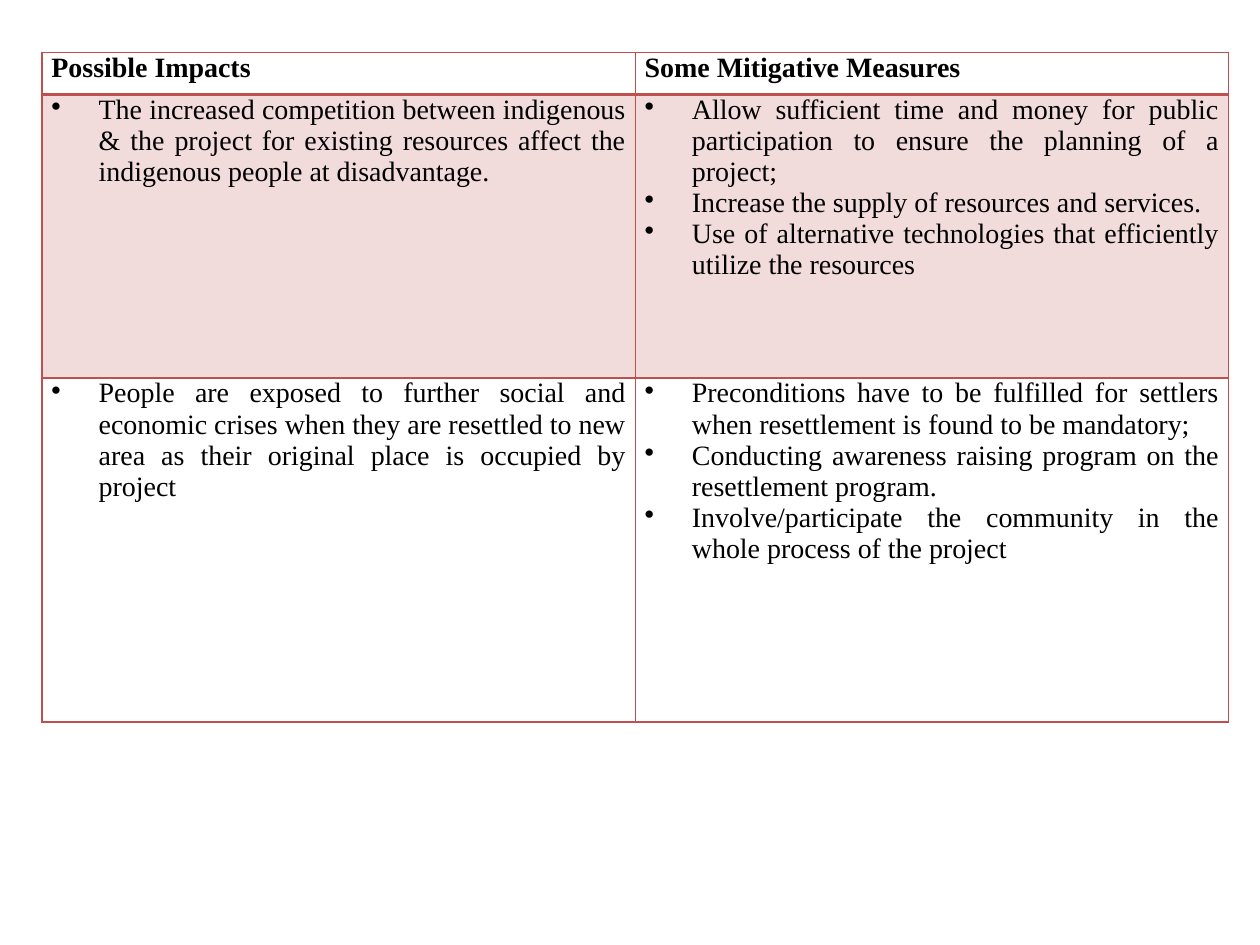
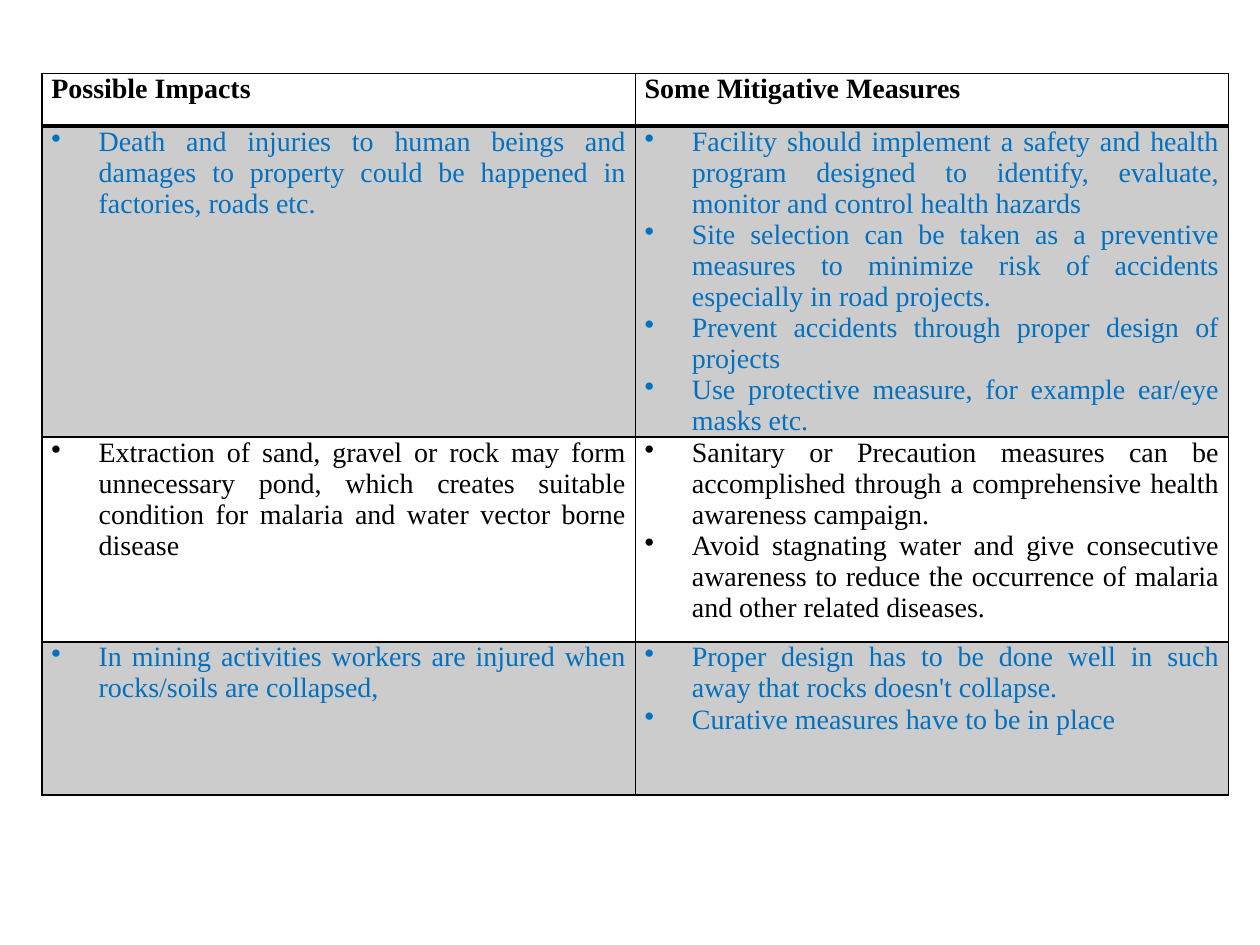
"""Two slides of tables pairing possible impacts with mitigative measures."""
from dataclasses import dataclass

from lxml import etree
from pptx import Presentation
from pptx.dml.color import RGBColor
from pptx.enum import text
from pptx.oxml import ns
from pptx.util import Pt

BLACK = RGBColor(0x00, 0x00, 0x00)
RED = RGBColor(0xC0, 0x50, 0x4D)
BLUE = RGBColor(0x00, 0x70, 0xC0)

FONT = "Times New Roman"
TEXT_SIZE = Pt(16)
LEFT = Pt(24)
COLUMN_WIDTH = Pt(339)
SIDE_MARGIN = Pt(5.4)
BULLET_INDENT = Pt(27)
BAND_OPACITY = 20
HEADINGS = ("Possible Impacts", "Some Mitigative Measures")


@dataclass(frozen=True)
class Concern:
    impact: str
    measures: tuple[str, ...]
    height: float


@dataclass(frozen=True)
class ImpactTable:
    top: float
    header_height: float
    accent: RGBColor
    band_text: RGBColor
    concerns: tuple[Concern, ...]


IMPACT_TABLES = (
    ImpactTable(30, 24, RED, BLACK, (
        Concern(
            "The increased competition between indigenous & the project for "
            "existing resources affect the indigenous people at disadvantage.",
            (
                "Allow sufficient time and money for public participation to "
                "ensure the planning of a project;",
                "Increase the supply of resources and services.",
                "Use of alternative technologies that efficiently utilize the resources",
            ),
            162),
        Concern(
            "People are exposed to further social and economic crises when they are "
            "resettled to new area as their original place is occupied by project",
            (
                "Preconditions have to be fulfilled for settlers when resettlement "
                "is found to be mandatory;",
                "Conducting awareness raising program on the resettlement program.",
                "Involve/participate the community in the whole process of the project",
            ),
            196.5),
    )),
    ImpactTable(42, 30, BLACK, BLUE, (
        Concern(
            "Death and injuries to human beings and damages to property could be "
            "happened in factories, roads etc.",
            (
                "Facility should implement a safety and health program designed to "
                "identify, evaluate, monitor and control health hazards",
                "Site selection can be taken as a preventive measures to minimize "
                "risk of accidents especially in road projects.",
                "Prevent accidents through proper design of projects",
                "Use protective measure, for example ear/eye masks etc.",
            ),
            175),
        Concern(
            "Extraction of sand, gravel or rock may form unnecessary pond, which "
            "creates suitable condition for malaria and water vector borne disease",
            (
                "Sanitary or Precaution measures can be accomplished through a "
                "comprehensive health awareness campaign.",
                "Avoid stagnating water and give consecutive awareness to reduce the "
                "occurrence of malaria and other related diseases.",
            ),
            117),
        Concern(
            "In mining activities workers are injured when rocks/soils are collapsed,",
            (
                "Proper design has to be done well in such away that rocks doesn't collapse.",
                "Curative measures have to be in place",
            ),
            87.5),
    )),
)


def add_child(parent, tag: str, **attributes):
    """Append a DrawingML element and return it."""
    return etree.SubElement(
        parent, ns.qn(tag), {key: str(value) for key, value in attributes.items()})


def draw_borders(cell, color: RGBColor, top: float, bottom: float) -> None:
    """Outline a cell, with its own weights above and below."""
    properties = cell._tc.get_or_add_tcPr()
    for side, weight in (("L", 1), ("R", 1), ("T", top), ("B", bottom)):
        line = add_child(properties, f"a:ln{side}", w=Pt(weight))
        add_child(add_child(line, "a:solidFill"), "a:srgbClr", val=color)


def fill_band(cell, color: RGBColor) -> None:
    """Tint a cell with a translucent colour."""
    cell.fill.solid()
    cell.fill.fore_color.rgb = color
    tint = cell._tc.tcPr.find(".//" + ns.qn("a:solidFill") + "[last()]")
    tint = cell._tc.tcPr.find(ns.qn("a:solidFill")).find(ns.qn("a:srgbClr"))
    add_child(tint, "a:alpha", val=BAND_OPACITY * 1000)


def write_cell(cell, lines: tuple[str, ...], color: RGBColor, heading: bool) -> None:
    """Write justified lines, bold in a heading and bulleted elsewhere."""
    cell.margin_left = cell.margin_right = SIDE_MARGIN
    cell.margin_top = cell.margin_bottom = Pt(0)
    cell.text_frame.text = "\n".join(lines)
    for paragraph in cell.text_frame.paragraphs:
        paragraph.alignment = text.PP_ALIGN.JUSTIFY
        if not heading:
            properties = paragraph._p.get_or_add_pPr()
            properties.set("marL", str(BULLET_INDENT))
            properties.set("indent", str(-BULLET_INDENT))
            add_child(properties, "a:buChar", char="•")
        for run in paragraph.runs:
            run.font.name = FONT
            run.font.size = TEXT_SIZE
            run.font.bold = heading
            run.font.color.rgb = color


def draw_impact_table(slide, content: ImpactTable) -> None:
    """Draw one table with a heading row and banded concerns."""
    heights = [content.header_height, *(c.height for c in content.concerns)]
    rows = [tuple((heading,) for heading in HEADINGS)]
    rows += [((c.impact,), c.measures) for c in content.concerns]
    table = slide.shapes.add_table(
        len(rows), len(HEADINGS), LEFT, Pt(content.top),
        COLUMN_WIDTH * len(HEADINGS), Pt(sum(heights))).table
    table.first_row = table.horz_banding = False
    for column in table.columns:
        column.width = COLUMN_WIDTH
    for index, (height, row) in enumerate(zip(heights, rows)):
        table.rows[index].height = Pt(height)
        heading, banded = index == 0, index % 2 == 1
        for column, lines in enumerate(row):
            cell = table.cell(index, column)
            draw_borders(cell, content.accent,
                         top=2 if index == 1 else 1, bottom=2 if heading else 1)
            if banded:
                fill_band(cell, content.accent)
            else:
                cell.fill.background()
            write_cell(cell, lines, content.band_text if banded else BLACK, heading)


def main() -> None:
    """Build both slides and save them."""
    deck = Presentation()
    deck.slide_width, deck.slide_height = Pt(720), Pt(540)
    for content in IMPACT_TABLES:
        draw_impact_table(deck.slides.add_slide(deck.slide_layouts[6]), content)
    deck.save("out.pptx")


if __name__ == "__main__":
    main()
